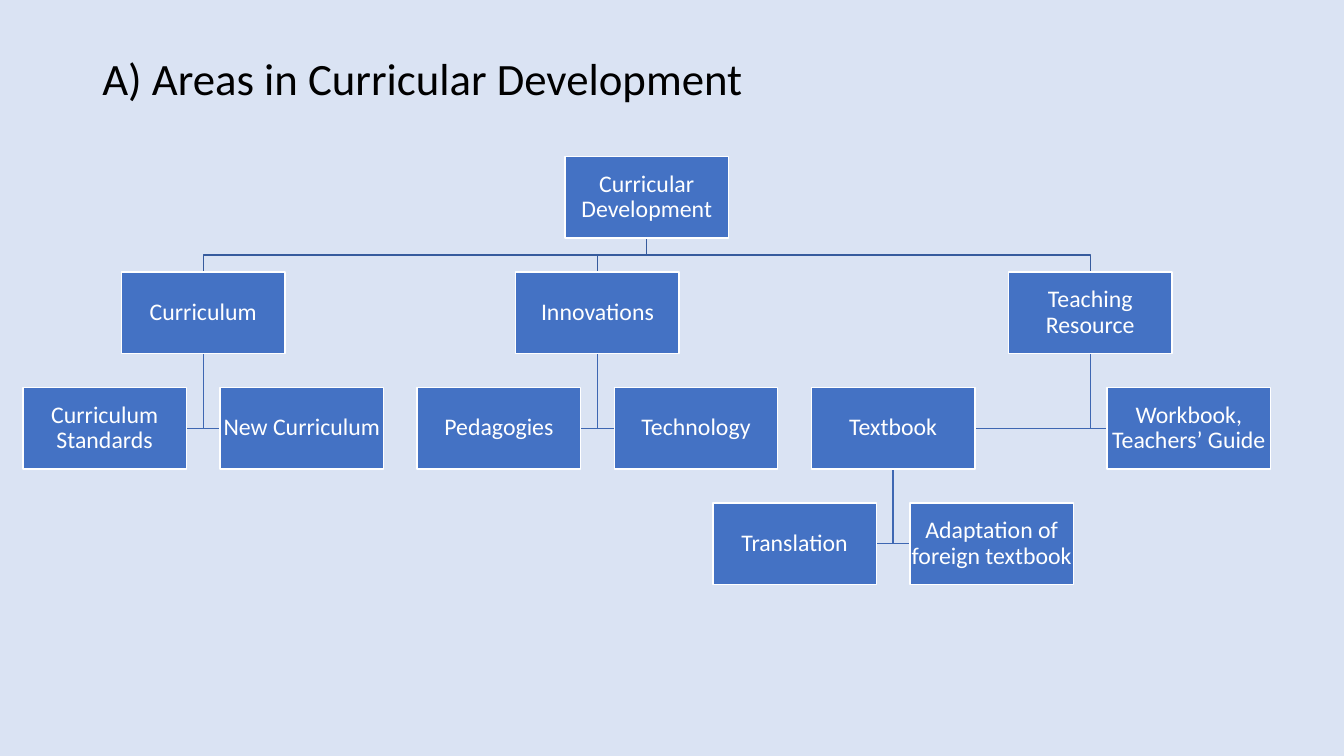
from pptx import Presentation
from pptx.dml.color import RGBColor
from pptx.enum import shapes, text
from pptx.util import Pt

THEME = {
    "background": RGBColor.from_string("DAE3F3"),
    "title": RGBColor.from_string("000000"),
    "box": RGBColor.from_string("4472C4"),
    "box_text": RGBColor.from_string("FFFFFF"),
    "branch": RGBColor.from_string("365B9D"),
    "hanger": RGBColor.from_string("3E67B2"),
    "font": "Calibri",
    "title_size": Pt(32),
    "box_size": Pt(17),
    "line": Pt(1),
}

LEFT, TOP = 16.4, 111.7
WIDTH, HEIGHT = 116.8, 58.4
COLUMN_STEP, ROW_STEP = 70.4, 82.5
GAP = ROW_STEP - HEIGHT

NODES = [
    ("Curricular Development", 5.5, 0, None),
    ("Curriculum", 1, 1, "Curricular Development"),
    ("Curriculum Standards", 0, 2, "Curriculum"),
    ("New Curriculum", 2, 2, "Curriculum"),
    ("Innovations", 5, 1, "Curricular Development"),
    ("Pedagogies", 4, 2, "Innovations"),
    ("Technology", 6, 2, "Innovations"),
    ("Teaching Resource", 10, 1, "Curricular Development"),
    ("Textbook", 8, 2, "Teaching Resource"),
    ("Translation", 7, 3, "Textbook"),
    ("Adaptation of foreign textbook", 9, 3, "Textbook"),
    ("Workbook, Teachers’ Guide", 11, 2, "Teaching Resource"),
]


def write(tf, words, size, color):
    tf.word_wrap = True
    tf.vertical_anchor = text.MSO_ANCHOR.MIDDLE
    p = tf.paragraphs[0]
    p.text = words
    p.line_spacing = 0.9
    r = p.runs[0]
    r.font.name = THEME["font"]
    r.font.size = size
    r.font.color.rgb = color
    return p


prs = Presentation()
prs.slide_width, prs.slide_height = Pt(960), Pt(540)
s = prs.slides.add_slide(prs.slide_layouts[6])
s.background.fill.solid()
s.background.fill.fore_color.rgb = THEME["background"]

title = s.shapes.add_textbox(Pt(66), Pt(28.8), Pt(828), Pt(57.6))
write(title.text_frame, "A) Areas in Curricular Development",
      THEME["title_size"], THEME["title"])

corners = {name: (LEFT + column * COLUMN_STEP, TOP + row * ROW_STEP)
           for name, column, row, parent in NODES}

for name, column, row, parent in NODES:
    if parent is None:
        continue
    x, y = corners[name]
    parent_x, parent_y = corners[parent]
    start_x, start_y = parent_x + WIDTH / 2, parent_y + HEIGHT
    if row == 1:
        bend_y = start_y + GAP / 2
        points = [(start_x, bend_y), (x + WIDTH / 2, bend_y), (x + WIDTH / 2, y)]
        color = THEME["branch"]
    else:
        side_x = x if x > parent_x else x + WIDTH
        middle_y = y + HEIGHT / 2
        points = [(start_x, middle_y), (side_x, middle_y)]
        color = THEME["hanger"]
    outline = s.shapes.build_freeform(Pt(start_x), Pt(start_y))
    outline.add_line_segments([(Pt(a), Pt(b)) for a, b in points], close=False)
    sp = outline.convert_to_shape()
    sp.shadow.inherit = False
    sp.fill.background()
    sp.line.color.rgb = color
    sp.line.width = THEME["line"]

for name, (x, y) in corners.items():
    sp = s.shapes.add_shape(shapes.MSO_SHAPE.RECTANGLE,
                            Pt(x), Pt(y), Pt(WIDTH), Pt(HEIGHT))
    sp.shadow.inherit = False
    sp.fill.solid()
    sp.fill.fore_color.rgb = THEME["box"]
    sp.line.color.rgb = THEME["box_text"]
    sp.line.width = THEME["line"]
    tf = sp.text_frame
    tf.margin_left = tf.margin_right = tf.margin_top = tf.margin_bottom = Pt(0.8)
    p = write(tf, name, THEME["box_size"], THEME["box_text"])
    p.alignment = text.PP_ALIGN.CENTER

prs.save("out.pptx")
